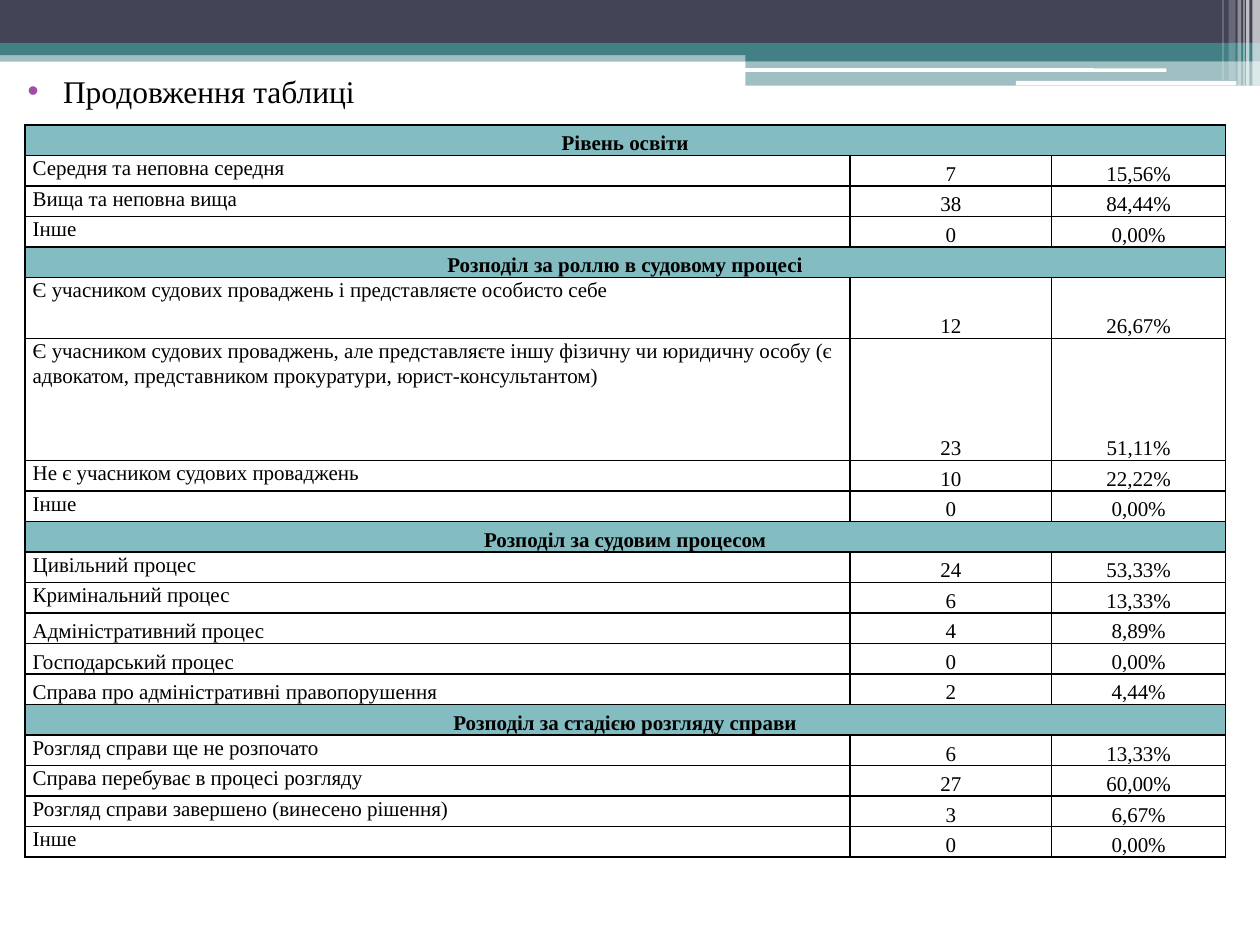
import pptx
import pptx.util
import pptx.dml.color
import pptx.enum.shapes
import pptx.enum.text
import pptx.oxml
import pptx.oxml.ns

Pt = pptx.util.Pt
RGB = pptx.dml.color.RGBColor
SHAPE = pptx.enum.shapes.MSO_SHAPE
ANCHOR = pptx.enum.text.MSO_ANCHOR
ALIGN = pptx.enum.text.PP_ALIGN
NS = pptx.oxml.ns.nsdecls("a")

DARK = RGB(0x42, 0x44, 0x56)
TEAL = RGB(0x43, 0x80, 0x86)
HEADING_FILL = RGB(0x83, 0xBC, 0xC1)
BULLET = RGB(0xA0, 0x4D, 0xA3)
WHITE = RGB(0xFF, 0xFF, 0xFF)
BLACK = RGB(0, 0, 0)
FONT = "Times New Roman"

# left, top, width, height, colour, opacity in percent
BANDS = [
    (0, 28.8, 720, 6.5, TEAL, 50),
    (0, 0, 720, 24.5, DARK, 100),
    (0, 24.5, 720, 7, TEAL, 100),
    (426, 28, 294, 7, TEAL, 100),
    (426, 35, 294, 14, TEAL, 50),
]
RULES = [
    (425.5, 39, 241, 2, WHITE, 100),
    (580.5, 46.2, 126, 2.6, WHITE, 100),
]
STRIPES = [
    (715.7, 0, 4.3, 49, WHITE, 65),
    (712, 0, 2, 49, WHITE, 65),
    (710.5, 0, 0.7, 49, WHITE, 60),
    (707.2, 0, 2, 49, WHITE, 40),
    (702, 0, 4, 46, WHITE, 20),
    (698.5, 0, 0.7, 46, WHITE, 30),
]

# A group heading, then label, count, share, height in row units, label anchor
TOP, BOTTOM = ANCHOR.TOP, ANCHOR.BOTTOM
GROUPS = [
    ("Рівень освіти", [
        ("Середня та неповна середня", "7", "15,56%", 1, TOP),
        ("Вища та неповна вища", "38", "84,44%", 1, TOP),
        ("Інше", "0", "0,00%", 1, TOP),
    ]),
    ("Розподіл за роллю в судовому процесі", [
        ("Є учасником судових проваджень і представляєте особисто себе",
         "12", "26,67%", 2, TOP),
        ("Є учасником судових проваджень, але представляєте іншу фізичну чи "
         "юридичну особу (є адвокатом, представником прокуратури, "
         "юрист-консультантом)", "23", "51,11%", 4, TOP),
        ("Не є учасником судових проваджень", "10", "22,22%", 1, TOP),
        ("Інше", "0", "0,00%", 1, TOP),
    ]),
    ("Розподіл за судовим процесом", [
        ("Цивільний процес", "24", "53,33%", 1, TOP),
        ("Кримінальний процес", "6", "13,33%", 1, TOP),
        ("Адміністративний процес", "4", "8,89%", 1, BOTTOM),
        ("Господарський процес", "0", "0,00%", 1, BOTTOM),
        ("Справа про адміністративні правопорушення", "2", "4,44%", 1, BOTTOM),
    ]),
    ("Розподіл за стадією розгляду справи", [
        ("Розгляд справи ще не розпочато", "6", "13,33%", 1, TOP),
        ("Справа перебуває в процесі розгляду", "27", "60,00%", 1, TOP),
        ("Розгляд справи завершено (винесено рішення)", "3", "6,67%", 1, TOP),
        ("Інше", "0", "0,00%", 1, TOP),
    ]),
]
COLUMN_SHARES = (6.55, 1.6, 1.38)


def set_font(p, size, bold=False):
    p.font.name = FONT
    p.font.size = Pt(size)
    p.font.bold = bold
    p.font.color.rgb = BLACK


def add_banner(s, left, top):
    parts = [(SHAPE.RECTANGLE, part) for part in BANDS]
    parts += [(SHAPE.ROUNDED_RECTANGLE, part) for part in RULES]
    parts += [(SHAPE.RECTANGLE, part) for part in STRIPES]
    for kind, (x, y, width, height, colour, opacity) in parts:
        sp = s.shapes.add_shape(kind, Pt(left + x), Pt(top + y),
                                Pt(width), Pt(height))
        sp.shadow.inherit = False
        sp.line.fill.background()
        sp.fill.solid()
        sp.fill.fore_color.rgb = colour
        if opacity < 100:
            clr = sp.fill._xPr.find(".//" + pptx.oxml.ns.qn("a:srgbClr"))
            clr.append(pptx.oxml.parse_xml(
                f'<a:alpha {NS} val="{opacity * 1000}"/>'))


def add_caption(s, left, top, width, height):
    sp = s.placeholders[1]
    sp.left, sp.top, sp.width, sp.height = map(Pt, (left, top, width, height))
    tf = sp.text_frame
    tf.auto_size = pptx.enum.text.MSO_AUTO_SIZE.NONE
    p = tf.paragraphs[0]
    p.text = "Продовження таблиці"
    p.space_before = Pt(3)
    set_font(p, 18)
    pPr = p._p.get_or_add_pPr()
    pPr.set("marL", str(Pt(28.8)))
    pPr.set("indent", str(Pt(-20.2)))
    bullet = (f'<a:buClr {NS}><a:srgbClr val="{BULLET}"/></a:buClr>',
              f'<a:buFont {NS} typeface="Arial"/>',
              f'<a:buChar {NS} char="•"/>')
    default_font = pPr.find(pptx.oxml.ns.qn("a:defRPr"))
    for xml in bullet:
        default_font.addprevious(pptx.oxml.parse_xml(xml))


def format_cell(cell, text, anchor, align, heading):
    cell.margin_left = cell.margin_right = Pt(4.5)
    cell.margin_top = cell.margin_bottom = 0
    cell.vertical_anchor = anchor
    p = cell.text_frame.paragraphs[0]
    p.text = text
    p.alignment = align
    p.line_spacing = 1.07
    set_font(p, 12, heading)
    tcPr = cell._tc.get_or_add_tcPr()
    for side in ("lnL", "lnR", "lnT", "lnB"):
        tcPr.append(pptx.oxml.parse_xml(
            f'<a:{side} {NS} w="{Pt(1)}"><a:solidFill>'
            f'<a:srgbClr val="{BLACK}"/></a:solidFill></a:{side}>'))
    if heading:
        cell.fill.solid()
        cell.fill.fore_color.rgb = HEADING_FILL
    else:
        cell.fill.background()


def add_survey_table(s, left, top, width, height):
    rows = []
    for heading, answers in GROUPS:
        rows.append((heading, "", "", 1, BOTTOM))
        rows += answers
    unit = height / sum(row[3] for row in rows)
    table = s.shapes.add_table(len(rows), len(COLUMN_SHARES), Pt(left), Pt(top),
                               Pt(width), Pt(height)).table
    table.first_row = table.horz_banding = False
    for column, share in zip(table.columns, COLUMN_SHARES):
        column.width = Pt(width * share / sum(COLUMN_SHARES))
    for i, (label, count, percent, units, anchor) in enumerate(rows):
        table.rows[i].height = Pt(unit * units)
        heading = not count
        for j, text in enumerate((label, count, percent)):
            is_label = j == 0 and not heading
            format_cell(table.cell(i, j), text, anchor if is_label else BOTTOM,
                        ALIGN.LEFT if is_label else ALIGN.CENTER, heading)
        if heading:
            table.cell(i, 0).merge(table.cell(i, 2))


def main():
    prs = pptx.Presentation()
    prs.slide_width, prs.slide_height = Pt(720), Pt(540)
    s = prs.slides.add_slide(prs.slide_layouts[1])
    title = s.shapes.title._element
    title.getparent().remove(title)
    add_banner(s, 0, 0)
    add_caption(s, 0, 37.5, 648, 39.6)
    add_survey_table(s, 14.2, 71.3, 686.2, 419)
    prs.save("out.pptx")


if __name__ == "__main__":
    main()
